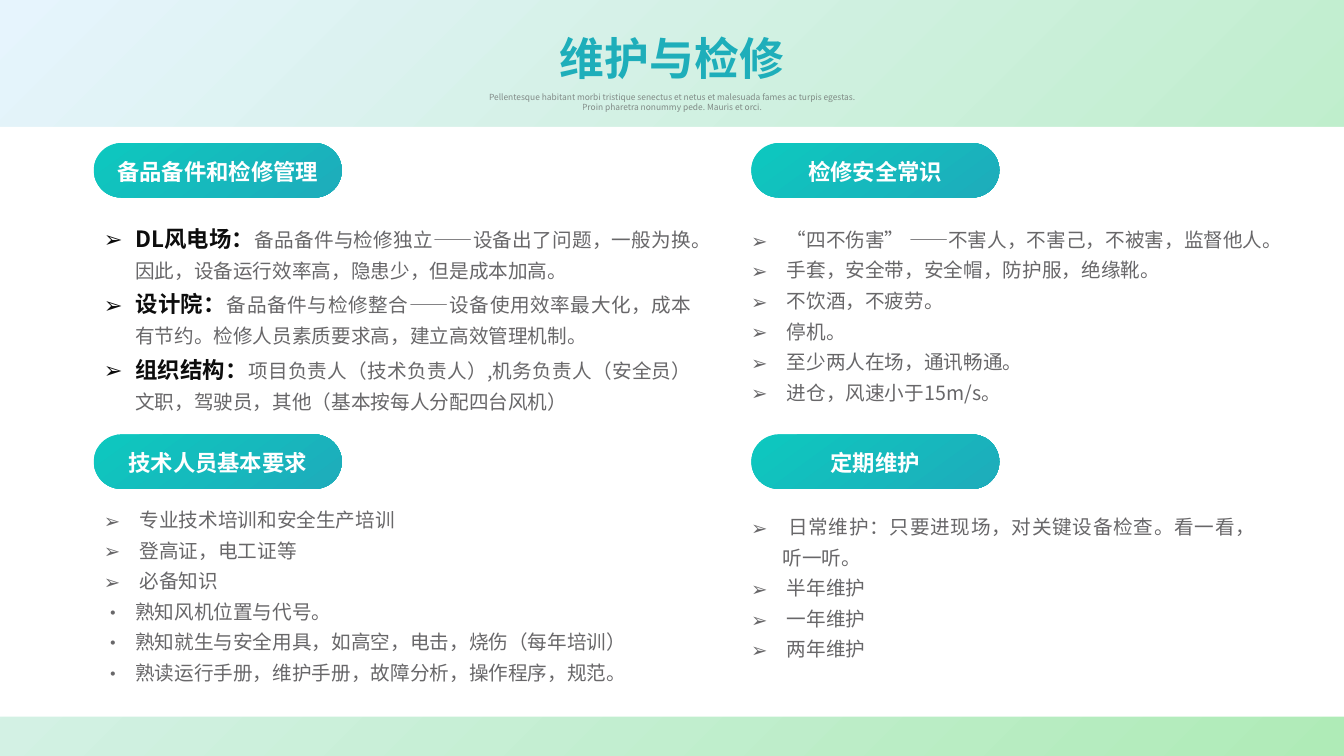
"""Build the slide on maintenance and overhaul of wind turbines."""
from lxml import etree
from pptx import Presentation
from pptx import util as u
from pptx.dml import color
from pptx.enum import shapes, text
from pptx.oxml import ns

SANS = "Noto Sans CJK SC"
GREY = "686769"
ARROW, DOT = "➢", "•"


def paint(fill, *stops, angle=0):
    """Fill with one hex colour, or with a gradient between two."""
    if len(stops) == 1:
        fill.solid()
        fill.fore_color.rgb = color.RGBColor.from_string(stops[0])
        return
    fill.gradient()
    fill.gradient_angle = angle
    for stop, hex_colour, position in zip(fill.gradient_stops, stops, (0, 1)):
        stop.color.rgb = color.RGBColor.from_string(hex_colour)
        stop.position = position


def write(paragraph, words, size=14, colour=GREY, bold=False, font=SANS,
          align=text.PP_ALIGN.CENTER, spacing=1.0):
    """Add a formatted run to a paragraph."""
    paragraph.alignment = align
    paragraph.line_spacing = spacing
    paragraph.space_before = u.Pt(0)
    run = paragraph.add_run()
    run.text = words
    run.font.size, run.font.bold, run.font.name = u.Pt(size), bold, font
    paint(run.font.fill, colour)
    etree.SubElement(run.font._element, ns.qn("a:ea"), typeface=font)
    return run


deck = Presentation()
deck.slide_width, deck.slide_height = u.Inches(13.33), u.Inches(7.5)
slide = deck.slides.add_slide(deck.slide_layouts[4])
title = slide.shapes.title
placed = []

backdrop, panel = [
    slide.shapes.add_shape(kind, 0, 0, 0, 0)
    for kind in (shapes.MSO_SHAPE.ROUNDED_RECTANGLE, shapes.MSO_SHAPE.RECTANGLE)]
backdrop.adjustments[0] = 0
paint(backdrop.fill, "E6F4FD", "AFEBB7")
paint(panel.fill, "FFFFFF")
linear = backdrop._element.spPr.find(".//" + ns.qn("a:lin"))
radial = etree.Element(ns.qn("a:path"), path="circle")
etree.SubElement(radial, ns.qn("a:fillToRect"), r="100000", b="100000")
linear.getparent().replace(linear, radial)
for layer, box in ((backdrop, (0, 0, 100, 100)), (panel, (0, 16.8, 100, 78))):
    layer.shadow.inherit = False
    layer.line.fill.background()
    title._element.addprevious(layer._element)
    placed.append((layer, box))

title.text_frame.word_wrap = False
title.text_frame.vertical_anchor = text.MSO_ANCHOR.MIDDLE
write(title.text_frame.paragraphs[0], "维护与检修", size=32, colour="1EAEBA",
      bold=True, font="Noto Sans CJK JP")
placed.append((title, (40.8, 3.33, 18.4, 8.53)))

subtitle = slide.shapes.add_textbox(0, 0, 0, 0)
subtitle.text_frame.word_wrap = True
tagline = write(
    subtitle.text_frame.paragraphs[0],
    "Pellentesque habitant morbi tristique senectus et netus et malesuada fames "
    "ac turpis egestas. Proin pharetra nonummy pede. Mauris et orci.",
    size=6, colour="595959")
tint = tagline.font._element.find(".//" + ns.qn("a:srgbClr"))
etree.SubElement(tint, ns.qn("a:alpha"), val="68000")
placed.append((subtitle, (35.1, 11.47, 29.8, 4)))

LEFT, RIGHT = 6.98, 55.9
UPPER, LOWER = 18.93, 57.47
sections = [
    ("备品备件和检修管理", LEFT, UPPER, (6.98, 28, 45.24, 27.33), [
        (ARROW, "DL风电场：", "备品备件与检修独立——设备出了问题，一般为换。"
         "因此，设备运行效率高，隐患少，但是成本加高。"),
        (ARROW, "设计院：", "备品备件与检修整合——设备使用效率最大化，成本有节约。"
         "检修人员素质要求高，建立高效管理机制。"),
        (ARROW, "组织结构：", "项目负责人（技术负责人）,机务负责人（安全员）文职，"
         "驾驶员，其他（基本按每人分配四台风机）")]),
    ("技术人员基本要求", LEFT, LOWER, (6.98, 65.6, 40.5, 29.6), [
        (ARROW, "", " 专业技术培训和安全生产培训"),
        (ARROW, "", " 登高证，电工证等"),
        (ARROW, "", " 必备知识"),
        (DOT, "", "熟知风机位置与代号。"),
        (DOT, "", "熟知就生与安全用具，如高空，电击，烧伤（每年培训）"),
        (DOT, "", "熟读运行手册，维护手册，故障分析，操作程序，规范。")]),
    ("检修安全常识", RIGHT, UPPER, (55.14, 28.53, 42.09, 29.6), [
        (ARROW, "", " “四不伤害” ——不害人，不害己，不被害，监督他人。"),
        (ARROW, "", " 手套，安全带，安全帽，防护服，绝缘靴。"),
        (ARROW, "", " 不饮酒，不疲劳。"),
        (ARROW, "", " 停机。"),
        (ARROW, "", " 至少两人在场，通讯畅通。"),
        (ARROW, "", " 进仓，风速小于15m/s。")]),
    ("定期维护", RIGHT, LOWER, (55.14, 66.53, 39.01, 21.47), [
        (ARROW, "", " 日常维护：只要进现场，对关键设备检查。看一看，听一听。"),
        (ARROW, "", " 半年维护"),
        (ARROW, "", " 一年维护"),
        (ARROW, "", " 两年维护")]),
]

for number, (heading, column, row, box, points) in enumerate(sections, 1):
    pill = slide.shapes.add_shape(shapes.MSO_SHAPE.ROUNDED_RECTANGLE, 0, 0, 0, 0)
    pill.adjustments[0] = 0.5
    pill.shadow.inherit = False
    pill.line.fill.background()
    paint(pill.fill, "0DC8BF", "1EACBB", angle=306)
    pill.text_frame.vertical_anchor = text.MSO_ANCHOR.MIDDLE
    write(pill.text_frame.paragraphs[0], heading, size=16, colour="FFFFFF",
          bold=True, spacing=1.1)
    placed.append((pill, (column, row, 18.45, 7.2)))

    body = slide.placeholders[number]
    frame = body.text_frame
    frame.word_wrap = True
    frame.auto_size = text.MSO_AUTO_SIZE.NONE
    frame.vertical_anchor = text.MSO_ANCHOR.TOP
    placed.append((body, box))
    for index, (bullet, lead, detail) in enumerate(points):
        point = frame.add_paragraph() if index else frame.paragraphs[0]
        layout = {"align": text.PP_ALIGN.JUSTIFY, "spacing": 1.3}
        if lead:
            write(point, lead, size=16, colour="0D0D0D", bold=True, **layout)
        write(point, detail, **layout)
        marks = point._p.get_or_add_pPr()
        marks.set("marL", str(u.Inches(0.31)))
        marks.set("indent", str(-u.Inches(0.31)))
        etree.SubElement(marks, ns.qn("a:buFont"), typeface=SANS)
        etree.SubElement(marks, ns.qn("a:buChar"), char=bullet)

for part, (left, top, width, height) in placed:
    part.left, part.width = [int(deck.slide_width * n / 100) for n in (left, width)]
    part.top, part.height = [int(deck.slide_height * n / 100) for n in (top, height)]

deck.save("out.pptx")
